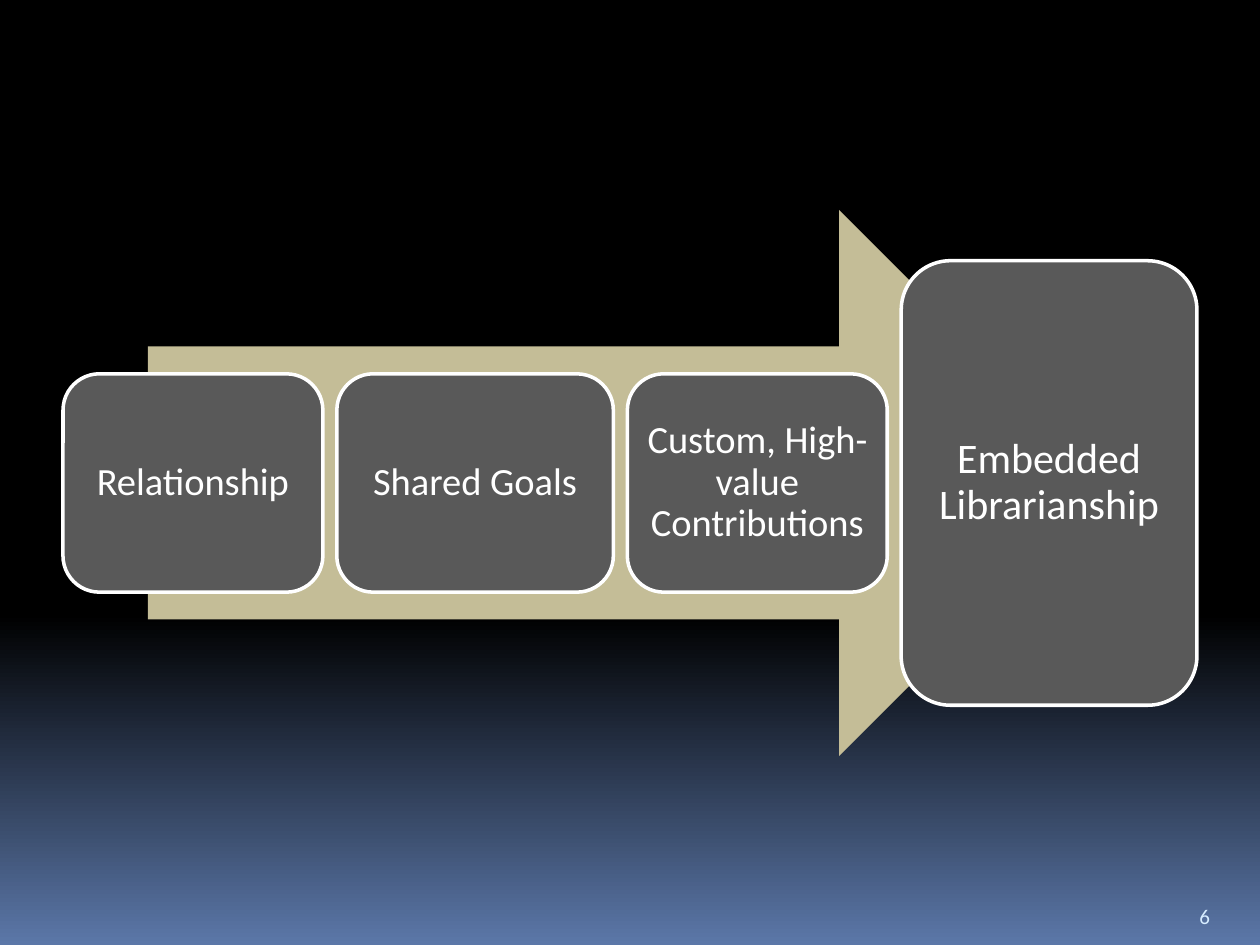
from pptx import Presentation
from pptx.util import Pt
from pptx.dml.color import RGBColor
from pptx.enum.shapes import MSO_SHAPE as Kind
from pptx.enum.text import MSO_ANCHOR as Anchor, PP_ALIGN as Align


def tint(code):
    return RGBColor.from_string(code)


def write(frame, text, size=22, color="FFFFFF", align=Align.CENTER,
          anchor=Anchor.MIDDLE, inset=0, space=0.9):
    frame.word_wrap = True
    frame.vertical_anchor = anchor
    frame.margin_left = frame.margin_right = Pt(inset)
    frame.margin_top = frame.margin_bottom = Pt(inset / 2)
    para = frame.paragraphs[0]
    para.alignment = align
    para.line_spacing = space
    run = para.add_run()
    run.text = text
    run.font.name = "Calibri"
    run.font.size = Pt(size)
    run.font.color.rgb = tint(color)


deck = Presentation()
deck.slide_width, deck.slide_height = Pt(720), Pt(540)
slide = deck.slides.add_slide(deck.slide_layouts[6])
shapes = slide.shapes

back = slide.background.fill
back.gradient()
back.gradient_angle = 270
for stop, (spot, code) in zip(back.gradient_stops, [(0.65, "000000"), (1, "5B77A8")]):
    stop.position = spot
    stop.color.rgb = tint(code)

page = shapes.add_textbox(Pt(678.25), Pt(505.5), Pt(36), Pt(28.75))
write(page.text_frame, "6", size=12, color="D6ECFF", align=Align.LEFT,
      anchor=Anchor.BOTTOM, inset=7.2, space=1)

mid = 276
arrow = shapes.add_shape(Kind.RIGHT_ARROW, Pt(84.5), Pt(mid - 156), Pt(551), Pt(312))
arrow.shadow.inherit = False
arrow.fill.solid()
arrow.fill.fore_color.rgb = tint("C4BD97")
arrow.line.fill.background()

steps = [
    ("Relationship", 148.5, 124.75, 22),
    ("Shared Goals", 158, 124.75, 22),
    ("Custom, High-value Contributions", 148.5, 124.75, 22),
    ("Embedded Librarianship", 169, 254, 24),
]
left, gap = 36, 8
for text, width, height, size in steps:
    box = shapes.add_shape(Kind.ROUNDED_RECTANGLE, Pt(left), Pt(mid - height / 2),
                           Pt(width), Pt(height))
    box.shadow.inherit = False
    box.fill.solid()
    box.fill.fore_color.rgb = tint("595959")
    box.line.color.rgb = tint("FFFFFF")
    box.line.width = Pt(2)
    write(box.text_frame, text, size=size)
    left += width + gap

deck.save("out.pptx")
